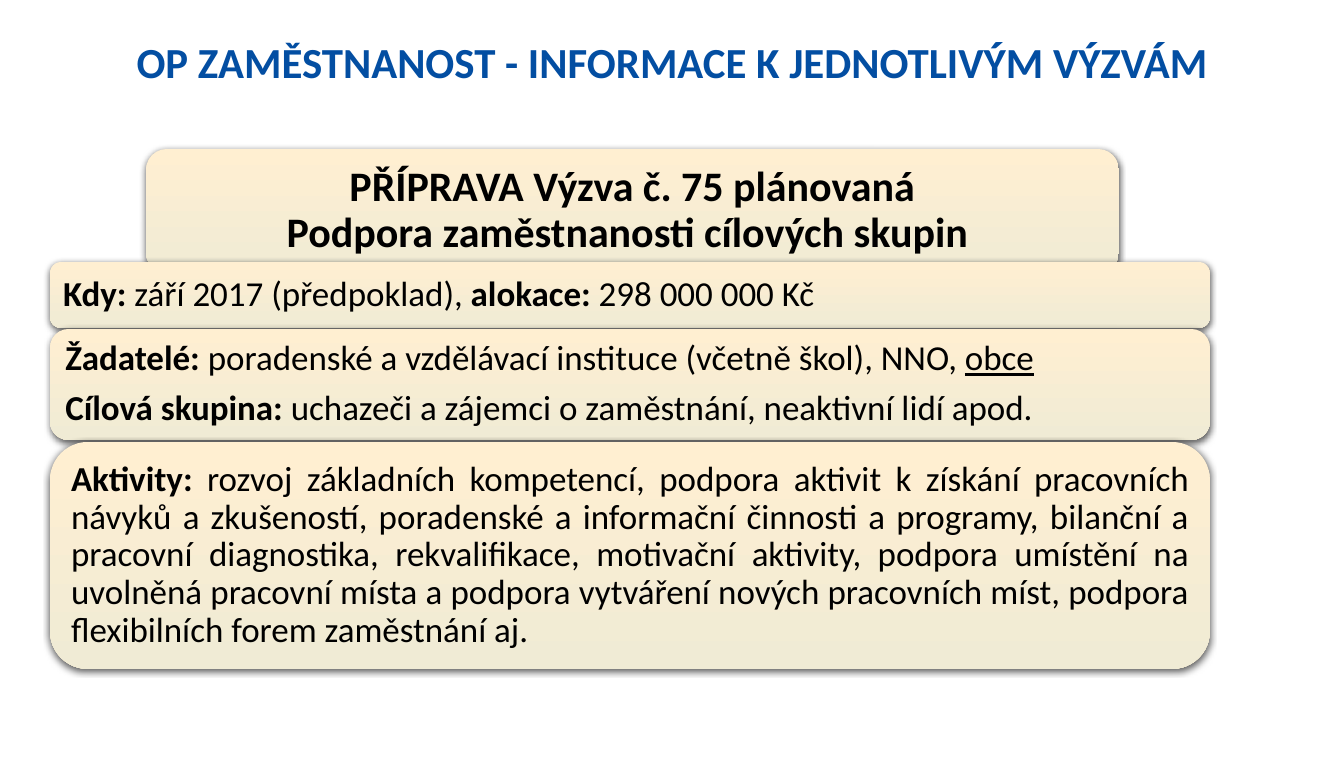
from dataclasses import dataclass

from lxml.etree import SubElement
from pptx import Presentation
from pptx.dml.color import RGBColor
from pptx.enum.shapes import MSO_SHAPE
from pptx.enum.text import MSO_ANCHOR, PP_ALIGN
from pptx.oxml.ns import qn
from pptx.util import Emu, Pt


@dataclass(frozen=True)
class Theme:
    font: str = "Calibri"
    title_color: RGBColor = RGBColor(0x03, 0x4E, 0xA2)
    text_color: RGBColor = RGBColor(0, 0, 0)
    gradient: tuple = (RGBColor(0xFF, 0xEF, 0xD1), RGBColor(0xF0, 0xEB, 0xD5))
    title_size: float = 30.6
    heading_size: int = 30
    body_size: int = 25
    paragraph_gap: float = 8.75


theme = Theme()


def px(value):
    return Emu(round(value * 914400 / 100.8))


def write(frame, paragraphs, size, color, align, inset, gap=0):
    """Each paragraph is a list of (text, style); style may hold b and u."""
    frame.word_wrap = True
    frame.margin_left = frame.margin_right = px(10)
    frame.margin_top = frame.margin_bottom = px(inset)
    for index, runs in enumerate(paragraphs):
        paragraph = frame.paragraphs[0] if index == 0 else frame.add_paragraph()
        paragraph.alignment = align
        paragraph.line_spacing = 0.9 if inset > 5 else 1.0
        if index:
            paragraph.space_before = Pt(gap)
        paragraph.font.name = theme.font
        paragraph.font.size = Pt(size)
        paragraph.font.color.rgb = color
        for text, style in runs:
            run = paragraph.add_run()
            run.text = text
            run.font.bold = "b" in style
            run.font.underline = "u" in style


presentation = Presentation()
presentation.slide_width, presentation.slide_height = px(1344), px(774)
slide = presentation.slides.add_slide(presentation.slide_layouts[6])

# Title
title = slide.shapes.add_textbox(px(67), px(31), px(1210), px(102))
write(title.text_frame, [[("OP ZAMĚSTNANOST - INFORMACE K JEDNOTLIVÝM VÝZVÁM", "b")]],
      theme.title_size, theme.title_color, PP_ALIGN.CENTER, 5)

# Panels: left, top, width, height, type size, alignment, inset, gap, paragraphs
panels = [
    (146, 149, 973, 124, theme.heading_size, PP_ALIGN.CENTER, 12, 0, [
        [("PŘÍPRAVA Výzva č. 75 plánovaná", "b")],
        [("Podpora zaměstnanosti cílových skupin ", "b")],
    ]),
    (50, 262, 1160, 66, theme.body_size, PP_ALIGN.LEFT, 10, 0, [
        [("Kdy: ", "b"), ("září 2017 (předpoklad), ", ""),
         ("alokace: ", "b"), ("298 000 000 Kč", "")],
    ]),
    (50, 329, 1160, 111, theme.body_size, PP_ALIGN.LEFT, 10, theme.paragraph_gap, [
        [("Žadatelé: ", "b"),
         ("poradenské a vzdělávací instituce (včetně škol), NNO, ", ""), ("obce", "u")],
        [("Cílová skupina: ", "b"),
         ("uchazeči a zájemci o zaměstnání, neaktivní lidí apod.", "")],
    ]),
    (50, 442, 1160, 227, theme.body_size, PP_ALIGN.JUSTIFY, 10, 0, [
        [("Aktivity: ", "b"),
         ("rozvoj základních kompetencí, podpora aktivit k získání pracovních návyků "
          "a zkušeností, poradenské a informační činnosti a programy, bilanční a pracovní "
          "diagnostika, rekvalifikace, motivační aktivity, podpora umístění na uvolněná "
          "pracovní místa a podpora vytváření nových pracovních míst, podpora flexibilních "
          "forem zaměstnání aj.", "")],
    ]),
]

for left, top, width, height, size, align, inset, gap, paragraphs in panels:
    panel = slide.shapes.add_shape(MSO_SHAPE.ROUNDED_RECTANGLE,
                                   px(left), px(top), px(width), px(height))
    panel.line.fill.background()
    panel.fill.gradient()
    panel.fill.gradient_angle = 270
    for stop, color, position in zip(panel.fill.gradient_stops, theme.gradient, (0, 1)):
        stop.color.rgb = color
        stop.position = position

    # Soft shadow below the panel
    panel.shadow.inherit = False
    effects = panel._element.spPr.find(qn("a:effectLst"))
    shadow = SubElement(effects, qn("a:outerShdw"), blurRad=str(Pt(4.5)),
                        dist=str(Pt(1.5)), dir="5400000", rotWithShape="0")
    shadow_color = SubElement(shadow, qn("a:srgbClr"), val="000000")
    SubElement(shadow_color, qn("a:alpha"), val="63000")

    panel.text_frame.vertical_anchor = MSO_ANCHOR.MIDDLE
    write(panel.text_frame, paragraphs, size, theme.text_color, align, inset, gap)

presentation.save("out.pptx")
